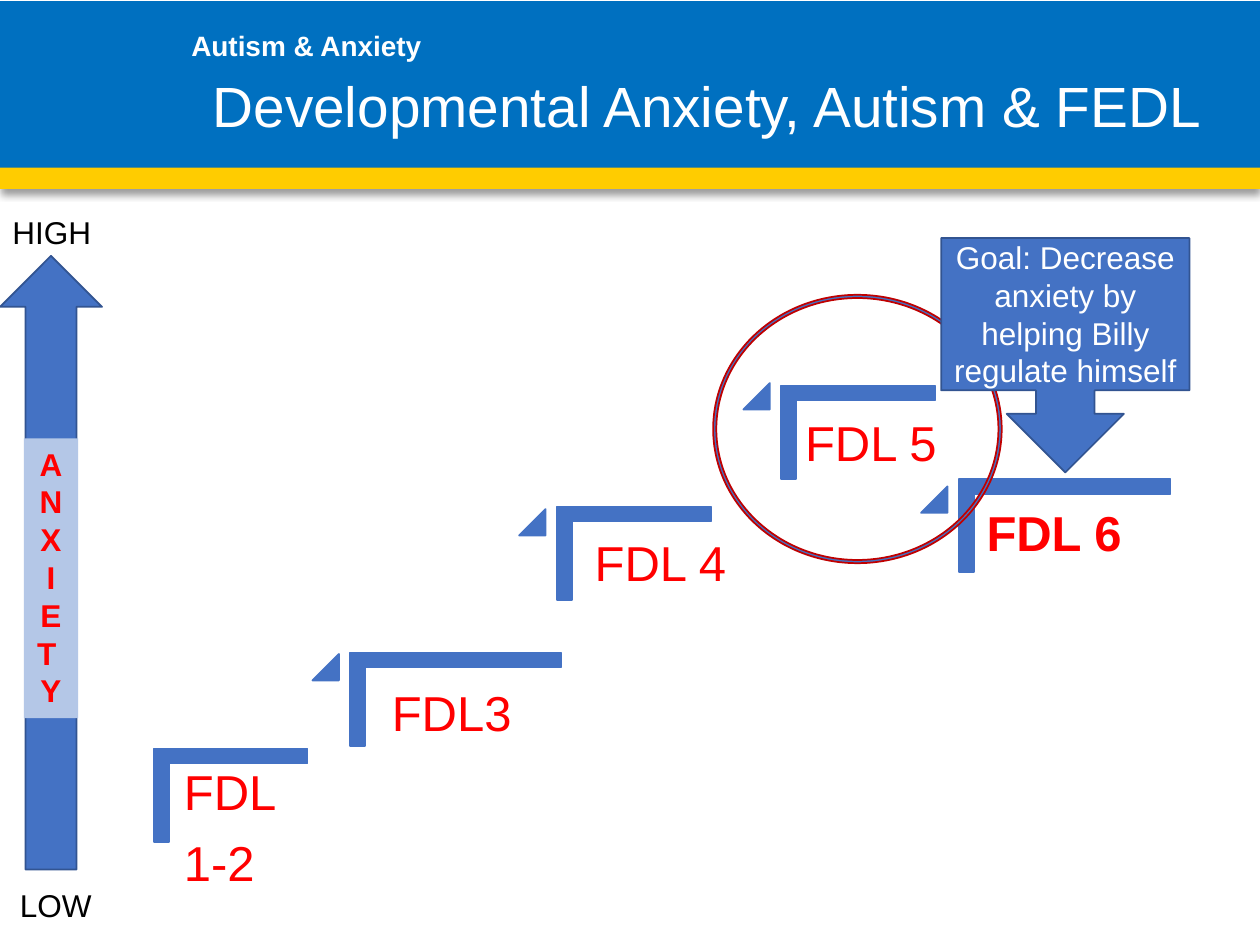
from lxml.etree import SubElement
from pptx import Presentation
from pptx.dml.color import RGBColor
from pptx.enum.shapes import MSO_SHAPE
from pptx.enum.text import MSO_ANCHOR, PP_ALIGN
from pptx.oxml.ns import qn
from pptx.util import Inches, Pt

FONT = "Arial"
BLUE, DARK_BLUE, PALE_BLUE = "4472C4", "325491", "B4C7E7"
RED, WHITE, BLACK = "FF0000", "FFFFFF", "000000"
STEP_HEIGHT = 0.74

# label, step left, top and width, label left, top and width, triangle top, bold
STEPS = [
    ("FDL\n1-2", 1.22, 5.94, 1.22, 1.34, 5.98, 1.53, None, False),
    ("FDL3", 2.78, 5.18, 1.67, 2.99, 5.35, 1.41, 5.19, False),
    ("FDL 4", 4.42, 4.02, 1.22, 4.6, 4.16, 1.38, 4.04, False),
    ("FDL 5", 6.2, 3.06, 1.22, 6.27, 3.21, 1.64, 3.04, False),
    ("FDL 6", 7.61, 3.8, 1.68, 7.71, 3.92, 2, 3.86, True),
]


def color(value):
    return RGBColor.from_string(value)


def style_font(paragraph, size, text_color, bold=False):
    font = paragraph.font
    font.name, font.size, font.bold = FONT, Pt(size), bold
    font.color.rgb = color(text_color)


def add_figure(slide, kind, left, top, width, height, fill, line=None,
               adjustments=(), rotation=0):
    shape = slide.shapes.add_shape(
        kind, Inches(left), Inches(top), Inches(width), Inches(height))
    shape.shadow.inherit = False
    shape.fill.solid()
    shape.fill.fore_color.rgb = color(fill)
    if line:
        shape.line.color.rgb = color(line)
        shape.line.width = Pt(1)
    else:
        shape.line.fill.background()
    for index, value in enumerate(adjustments):
        shape.adjustments[index] = value
    shape.rotation = rotation
    return shape


def add_text(slide, text, left, top, width, height, size, text_color,
             bold=False, centered=False, wrap=True):
    """Add a text box with one paragraph for each line of text."""
    box = slide.shapes.add_textbox(
        Inches(left), Inches(top), Inches(width), Inches(height))
    frame = box.text_frame
    frame.word_wrap = wrap
    frame.text = text
    for paragraph in frame.paragraphs:
        style_font(paragraph, size, text_color, bold)
        if centered:
            paragraph.alignment = PP_ALIGN.CENTER
    return box


def add_bottom_shadow(shape):
    effects = shape._element.spPr.find(qn("a:effectLst"))
    shadow = SubElement(effects, qn("a:outerShdw"), blurRad=str(Pt(4)),
                        dist=str(Pt(3)), dir="5400000", rotWithShape="0")
    shade = SubElement(shadow, qn("a:srgbClr"), val=BLACK)
    SubElement(shade, qn("a:alpha"), val="40000")


def add_header(slide):
    add_figure(slide, MSO_SHAPE.RECTANGLE, 0, 0.01, 10, 1.33, "0070C0")
    stripe = add_figure(slide, MSO_SHAPE.RECTANGLE, 0, 1.33, 10, 0.17, "FFCC00")
    add_bottom_shadow(stripe)
    add_text(slide, "Autism & Anxiety", 1.42, 0.18, 5.06, 0.37, 16, WHITE, bold=True)

    title = slide.shapes.title
    title.left, title.top = Inches(1.42), Inches(0.17)
    title.width, title.height = Inches(8.38), Inches(0.99)
    frame = title.text_frame
    frame.text = "Developmental Anxiety, Autism & FEDL"
    frame.vertical_anchor = MSO_ANCHOR.BOTTOM
    paragraph = frame.paragraphs[0]
    paragraph.alignment = PP_ALIGN.CENTER
    paragraph.line_spacing = 0.9
    style_font(paragraph, 32.4, WHITE)
    # Bring the title in front of the header band
    slide.shapes._spTree.append(title._element)


def add_step(slide, label, left, top, width, label_left, label_top,
             label_width, triangle_top, bold):
    if triangle_top is not None:
        add_figure(slide, MSO_SHAPE.ISOSCELES_TRIANGLE, left - 0.3, triangle_top,
                   0.21, 0.21, BLUE, BLUE, [1])
    # The corner is turned by 90 degrees, so its width and height swap
    shift = (width - STEP_HEIGHT) / 2
    add_figure(slide, MSO_SHAPE.CORNER, left + shift, top - shift, STEP_HEIGHT,
               width, BLUE, BLUE, [0.161, 0.161], rotation=90)
    lines = label.count("\n") + 1
    box = add_text(slide, label, label_left, label_top, label_width,
                   0.59 + 0.38 * lines, 28, RED, bold)
    frame = box.text_frame
    frame.margin_left = frame.margin_right = Inches(0.12)
    frame.margin_top = frame.margin_bottom = Inches(0.12)
    for paragraph in frame.paragraphs:
        paragraph.line_spacing = 0.9
        paragraph.space_after = Pt(9.8)


def add_anxiety_scale(slide):
    add_figure(slide, MSO_SHAPE.RIGHT_ARROW, -2.03, 4.06, 4.87, 0.81, BLUE,
               DARK_BLUE, rotation=270)
    letters = add_text(slide, "A\nN\nX\nI\nE\nT \nY", 0.19, 3.48, 0.43, 2.22, 18,
                       RED, bold=True, centered=True, wrap=False)
    letters.fill.solid()
    letters.fill.fore_color.rgb = color(PALE_BLUE)
    add_text(slide, "HIGH", 0, 1.64, 0.83, 0.4, 18, BLACK, wrap=False)
    add_text(slide, "LOW", 0.06, 6.98, 0.78, 0.4, 18, BLACK, wrap=False)


def add_goal(slide):
    add_figure(slide, MSO_SHAPE.DONUT, 5.66, 2.34, 2.29, 2.13, BLUE, "C00000", [0.012])
    add_figure(slide, MSO_SHAPE.DOWN_ARROW_CALLOUT, 7.47, 1.89, 1.97, 1.86, BLUE, DARK_BLUE)
    add_text(slide, "Goal: Decrease anxiety by\nhelping Billy regulate himself",
             7.47, 1.84, 1.97, 1.31, 18, WHITE, centered=True)


def main():
    presentation = Presentation()
    presentation.slide_width, presentation.slide_height = Inches(10), Inches(7.5)
    slide = presentation.slides.add_slide(presentation.slide_layouts[5])
    add_header(slide)
    for step in STEPS:
        add_step(slide, *step)
    add_anxiety_scale(slide)
    add_goal(slide)
    presentation.save("out.pptx")


if __name__ == "__main__":
    main()
